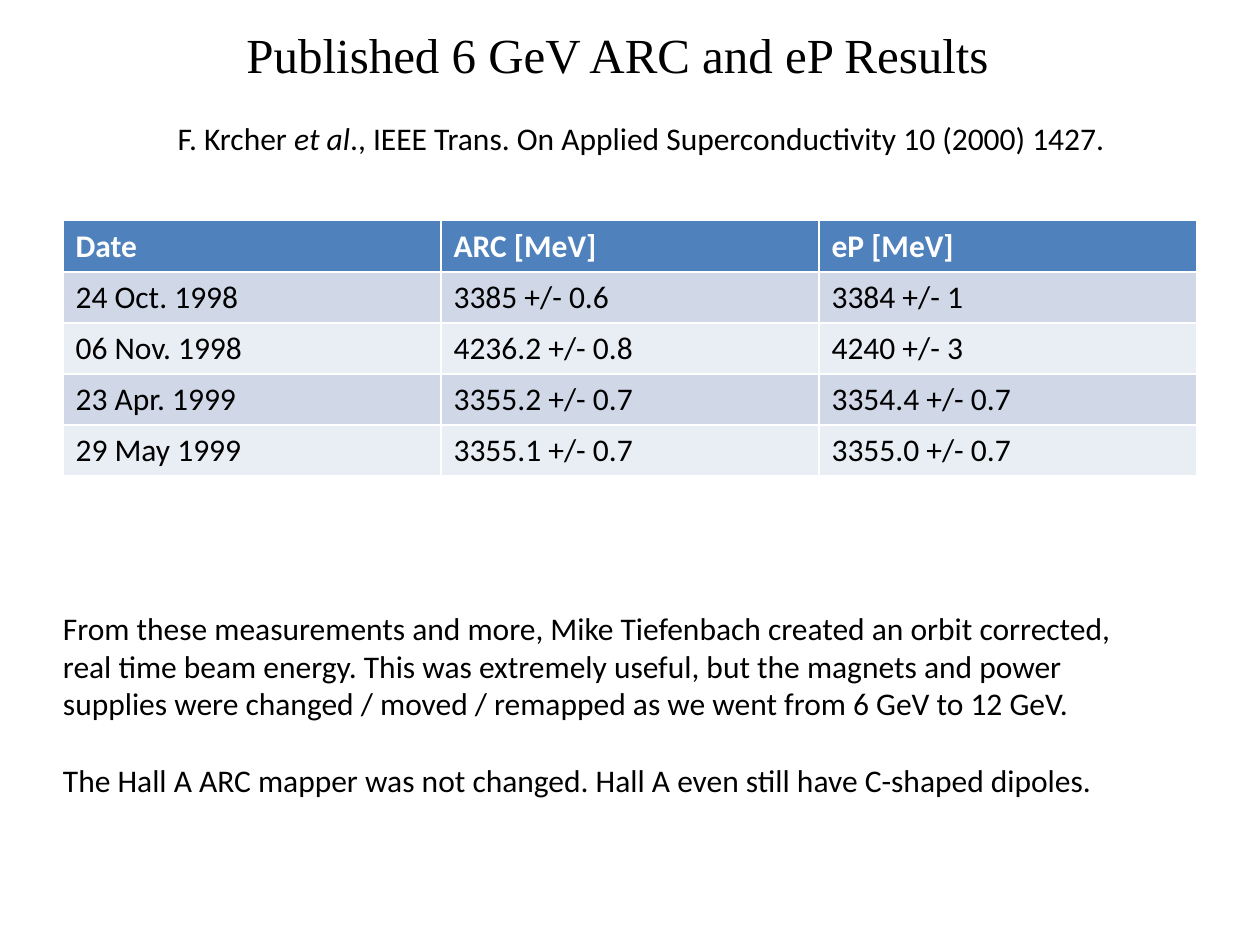
from pptx import Presentation
from pptx.dml.color import RGBColor
from pptx.enum.text import MSO_ANCHOR as Anchor, PP_ALIGN as Align
from pptx.util import Cm, Pt

BLACK, WHITE = "000000", "FFFFFF"
HEADER_FILL = "4F81BD"
BAND_FILLS = ("D0D8E8", "E9EDF4")

RESULTS = [
    ("Date", "ARC [MeV]", "eP [MeV]"),
    ("24 Oct. 1998", "3385 +/- 0.6", "3384 +/- 1"),
    ("06 Nov. 1998", "4236.2 +/- 0.8", "4240 +/- 3"),
    ("23 Apr. 1999", "3355.2 +/- 0.7", "3354.4 +/- 0.7"),
    ("29 May 1999", "3355.1 +/- 0.7", "3355.0 +/- 0.7"),
]
CITATION = [
    ("F. Krcher ", False),
    ("et al", True),
    ("., IEEE Trans. On Applied Superconductivity 10 (2000) 1427.", False),
]
REMARKS = [
    "From these measurements and more, Mike Tiefenbach created an orbit corrected,",
    "real time beam energy. This was extremely useful, but the magnets and power "
    "supplies were changed / moved / remapped as we went from 6 GeV to 12 GeV.",
    "The Hall A ARC mapper was not changed. Hall A even still have C-shaped dipoles.",
]


def color(value):
    return RGBColor.from_string(value)


class SlideBuilder:
    body_font = "Calibri"
    title_font = "Times New Roman"
    body_size = 18
    title_size = 28

    def __init__(self, slide):
        self.slide = slide

    def style(self, font, name=body_font, size=body_size, fill=BLACK, bold=False):
        font.name = name
        font.size = Pt(size)
        font.bold = bold
        font.color.rgb = color(fill)

    def frame(self, left, top, width, height, wrap=True):
        """Add a text box, measured in centimetres, and return its text frame."""
        box = self.slide.shapes.add_textbox(Cm(left), Cm(top), Cm(width), Cm(height))
        box.text_frame.word_wrap = wrap
        return box.text_frame

    def title(self, text, *place):
        text_frame = self.frame(*place)
        text_frame.text = text
        text_frame.vertical_anchor = Anchor.MIDDLE
        paragraph = text_frame.paragraphs[0]
        paragraph.alignment = Align.CENTER
        self.style(paragraph.runs[0].font, self.title_font, self.title_size)

    def citation(self, parts, *place):
        paragraph = self.frame(*place, wrap=False).paragraphs[0]
        for text, italic in parts:
            run = paragraph.add_run()
            run.text = text
            self.style(run.font)
            run.font.italic = italic

    def remarks(self, texts, *place):
        text_frame = self.frame(*place)
        text_frame.text = "\n".join(texts)
        for paragraph in text_frame.paragraphs:
            self.style(paragraph.runs[0].font)
        text_frame.paragraphs[-1].space_before = Pt(22)

    def table(self, rows, left, top, width, height):
        table = self.slide.shapes.add_table(
            len(rows), len(rows[0]), Cm(left), Cm(top), Cm(width), Cm(height)
        ).table
        for row_index, row in enumerate(rows):
            header = row_index == 0
            fill = HEADER_FILL if header else BAND_FILLS[(row_index - 1) % 2]
            for column_index, text in enumerate(row):
                cell = table.cell(row_index, column_index)
                cell.text = text
                cell.fill.solid()
                cell.fill.fore_color.rgb = color(fill)
                self.style(cell.text_frame.paragraphs[0].runs[0].font,
                           fill=WHITE if header else BLACK, bold=header)


def main():
    presentation = Presentation()
    presentation.slide_width = Cm(25.4)
    presentation.slide_height = Cm(19.05)
    builder = SlideBuilder(presentation.slides.add_slide(presentation.slide_layouts[6]))
    builder.title("Published 6 GeV ARC and eP Results", 0, 0.53, 24.9, 1.1)
    builder.table(RESULTS, 1.27, 4.45, 22.86, 5.15)
    builder.citation(CITATION, 3.33, 2.27, 19.37, 1.03)
    builder.remarks(REMARKS, 1.02, 12.15, 22.35, 4.11)
    presentation.save("out.pptx")


if __name__ == "__main__":
    main()
